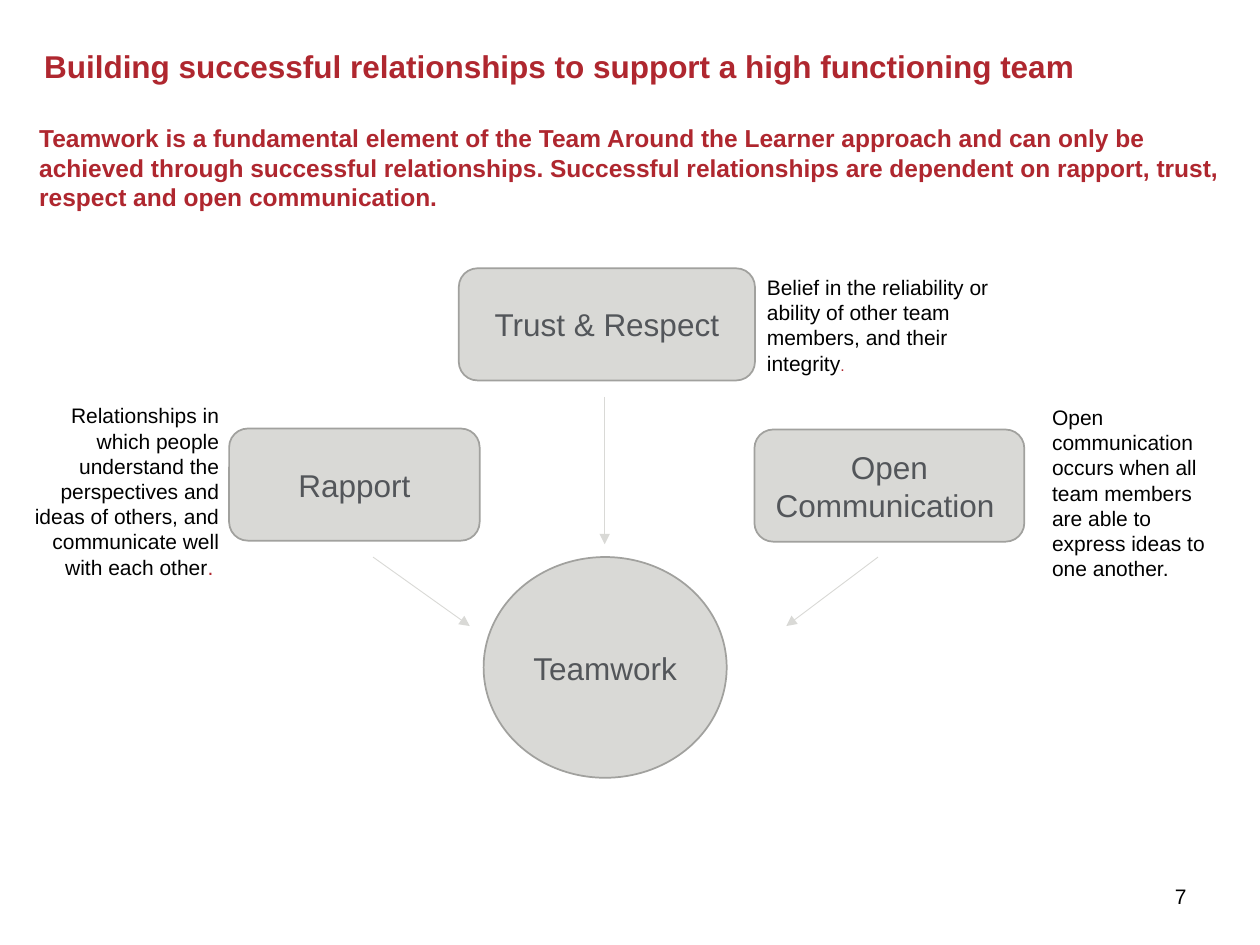
import pptx
import pptx.util
import pptx.dml.color
import pptx.enum.shapes
import pptx.enum.text
import pptx.oxml.ns
from lxml import etree

Cm, Pt = pptx.util.Cm, pptx.util.Pt
SHAPE = pptx.enum.shapes.MSO_SHAPE
ALIGN = pptx.enum.text.PP_ALIGN
ANCHOR = pptx.enum.text.MSO_ANCHOR
FIT = pptx.enum.text.MSO_AUTO_SIZE

FONT = "Arial"
COLORS = {"red": "AF272F", "grey": "D9D9D6", "outline": "A1A19E", "label": "53565A", "black": "000000"}

HEADING = "Building successful relationships to support a high functioning team"
INTRO = ("Teamwork is a fundamental element of the Team Around the Learner approach and can only be "
         "achieved through successful relationships. Successful relationships are dependent on "
         "rapport, trust, respect and open communication.")
PAGE_NUMBER = "7"

ELEMENTS = [
    ("Trust & Respect", SHAPE.ROUNDED_RECTANGLE, (9.25, 5.41, 5.97, 2.26)),
    ("Rapport", SHAPE.ROUNDED_RECTANGLE, (4.62, 8.64, 5.05, 2.26)),
    ("Open Communication ", SHAPE.ROUNDED_RECTANGLE, (15.21, 8.66, 5.44, 2.26)),
    ("Teamwork", SHAPE.OVAL, (9.75, 11.23, 4.9, 4.45)),
]
ARROWS = [
    (7.52, 11.23, 9.47, 12.62),
    (17.7, 11.23, 15.85, 12.62),
    (12.19, 8, 12.19, 10.97),
]
DEFINITIONS = [
    ([("Belief in the reliability or ability of other team members, and their integrity", 12, "black"),
      (".", 9, "red")], ALIGN.LEFT, (15.21, 5.41, 5.44, 2.31)),
    ([("Open communication occurs when all team members are able to express ideas to one another.",
       12, "black")], ALIGN.LEFT, (20.96, 8.03, 3.71, 3.84)),
    ([("Relationships in which people understand the perspectives and ideas of others, "
       "and communicate well with each other", 12, "black"),
      (". ", 12, "red")], ALIGN.RIGHT, (0.43, 8, 4.24, 3.84)),
]


def rgb(color):
    return pptx.dml.color.RGBColor.from_string(COLORS[color])


def write(frame, pieces, align=ALIGN.LEFT, anchor=ANCHOR.TOP, bold=False):
    frame.word_wrap = True
    frame.vertical_anchor = anchor
    paragraph = frame.paragraphs[0]
    paragraph.alignment = align
    for words, size, color in pieces:
        run = paragraph.add_run()
        run.text = words
        run.font.name = FONT
        run.font.size = Pt(size)
        run.font.bold = bold
        run.font.color.rgb = rgb(color)


def remove_margins(frame):
    frame.margin_left = frame.margin_top = frame.margin_right = frame.margin_bottom = 0


def add_text(slide, box, *args, **kwargs):
    frame = slide.shapes.add_textbox(*map(Cm, box)).text_frame
    write(frame, *args, **kwargs)
    return frame


def add_element(slide, label, kind, box):
    element = slide.shapes.add_shape(kind, *map(Cm, box))
    element.shadow.inherit = False
    element.fill.solid()
    element.fill.fore_color.rgb = rgb("grey")
    element.line.color.rgb = rgb("outline")
    element.line.width = Pt(1)
    write(element.text_frame, [(label, 18, "label")], ALIGN.CENTER, ANCHOR.MIDDLE)


def add_arrow(slide, ends):
    arrow = slide.shapes.add_connector(pptx.enum.shapes.MSO_CONNECTOR.STRAIGHT, *map(Cm, ends))
    arrow.line.color.rgb = rgb("grey")
    arrow.line.width = Pt(0.5)
    qn = pptx.oxml.ns.qn
    etree.SubElement(arrow.line._get_or_add_ln(), qn("a:tailEnd"), type="triangle")
    etree.SubElement(arrow._element.spPr, qn("a:effectLst"))


def main():
    deck = pptx.Presentation()
    deck.slide_width, deck.slide_height = Cm(25.4), Cm(19.05)
    slide = deck.slides.add_slide(deck.slide_layouts[5])

    heading = slide.shapes.title
    heading.left, heading.top, heading.width, heading.height = map(Cm, (0.89, 1.04, 23.5, 2.18))
    write(heading.text_frame, [(HEADING, 18, "red")], bold=True)
    heading.text_frame.paragraphs[0].line_spacing = 0.9
    remove_margins(heading.text_frame)

    intro = add_text(slide, (0.79, 2.49, 23.9, 14.53), [(INTRO, 14, "red")], bold=True)
    remove_margins(intro)

    for label, kind, box in ELEMENTS:
        add_element(slide, label, kind, box)
    for ends in ARROWS:
        add_arrow(slide, ends)
    for pieces, align, box in DEFINITIONS:
        add_text(slide, box, pieces, align).auto_size = FIT.SHAPE_TO_FIT_TEXT

    add_text(slide, (23.19, 17.55, 1.22, 1.02), [(PAGE_NUMBER, 12, "black")], ALIGN.CENTER, ANCHOR.MIDDLE)
    deck.save("out.pptx")


if __name__ == "__main__":
    main()
